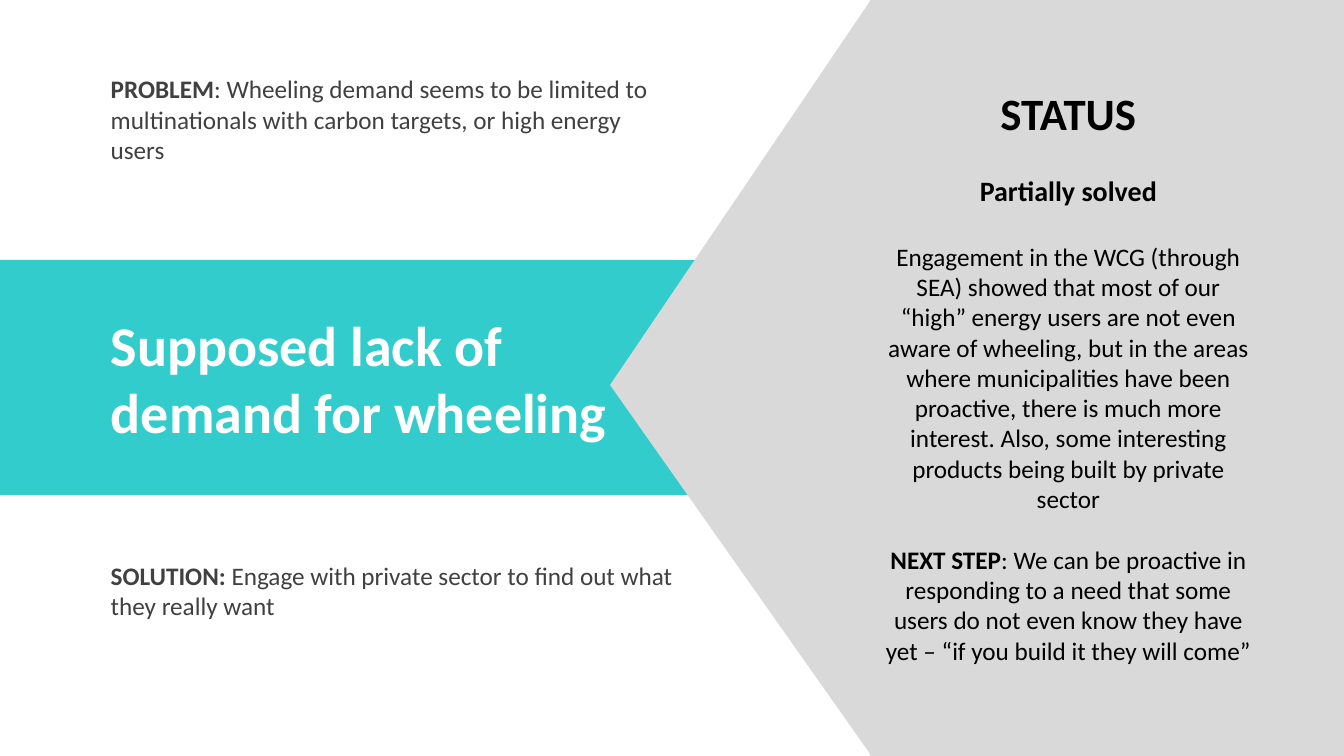
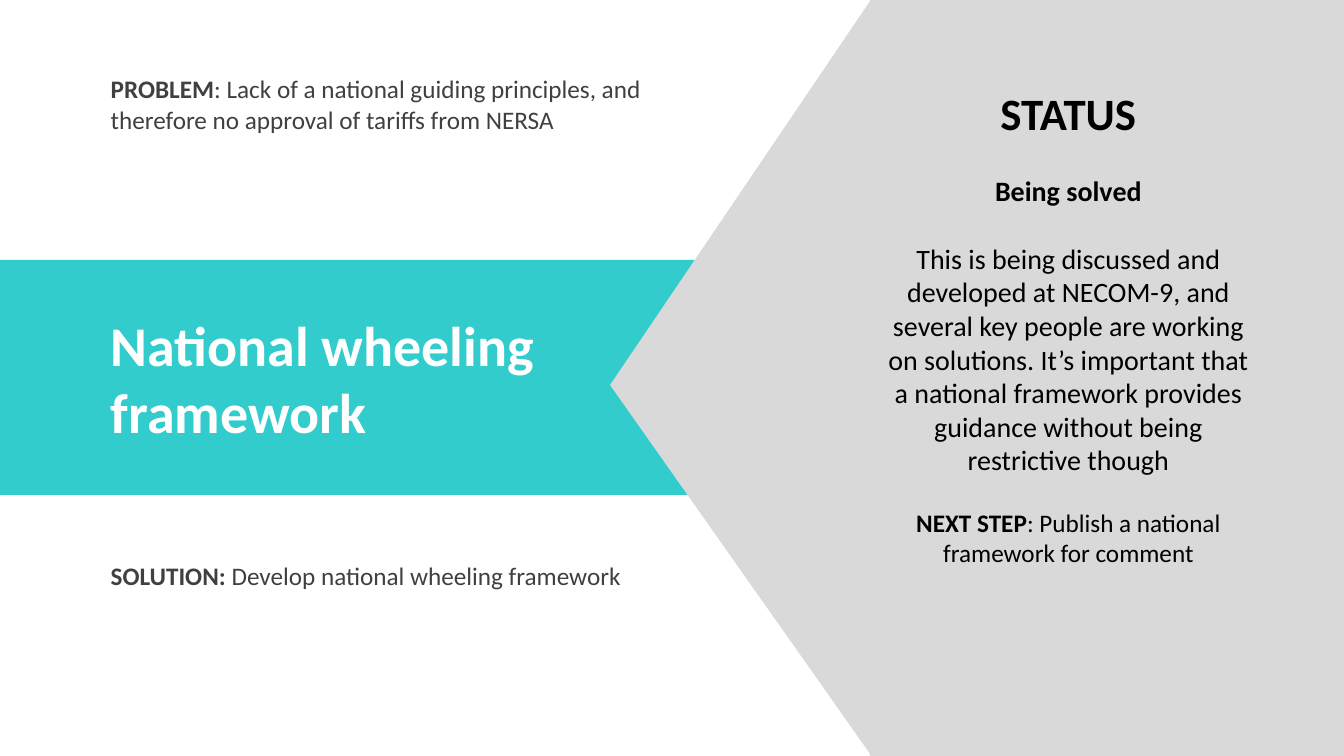
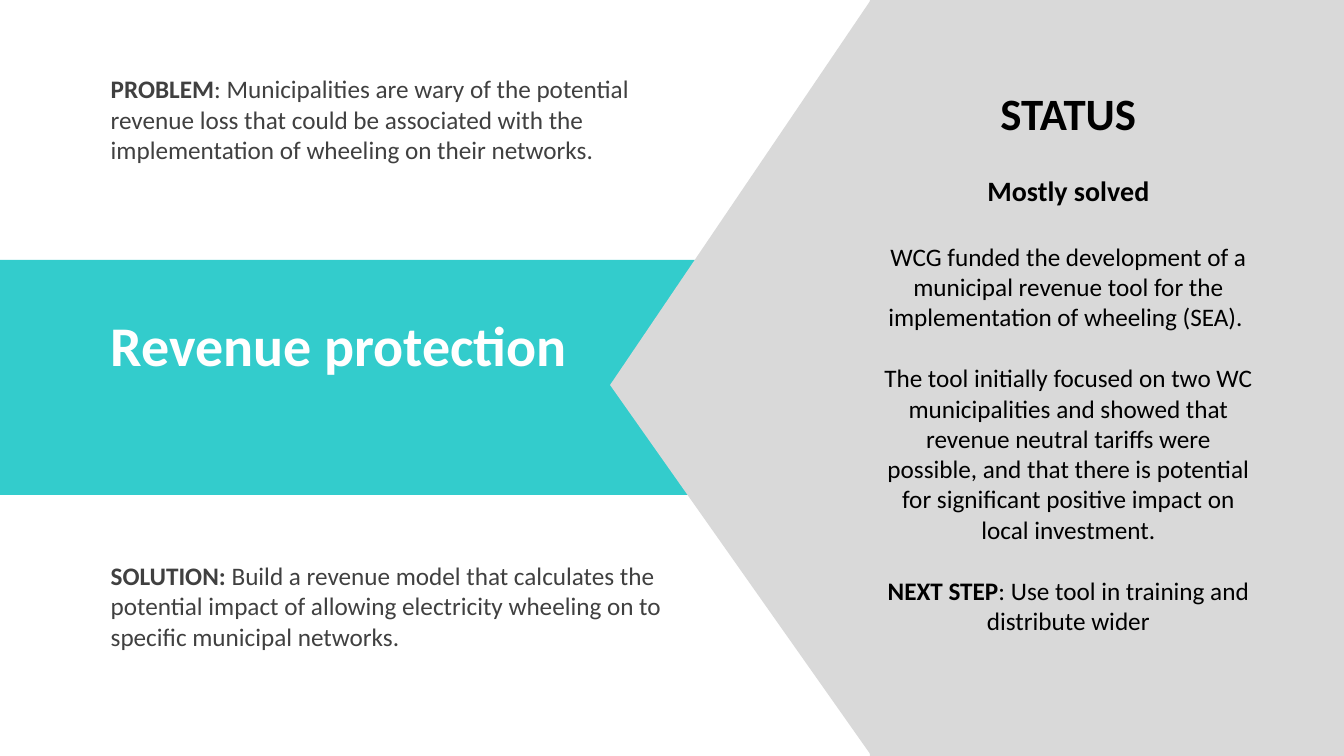
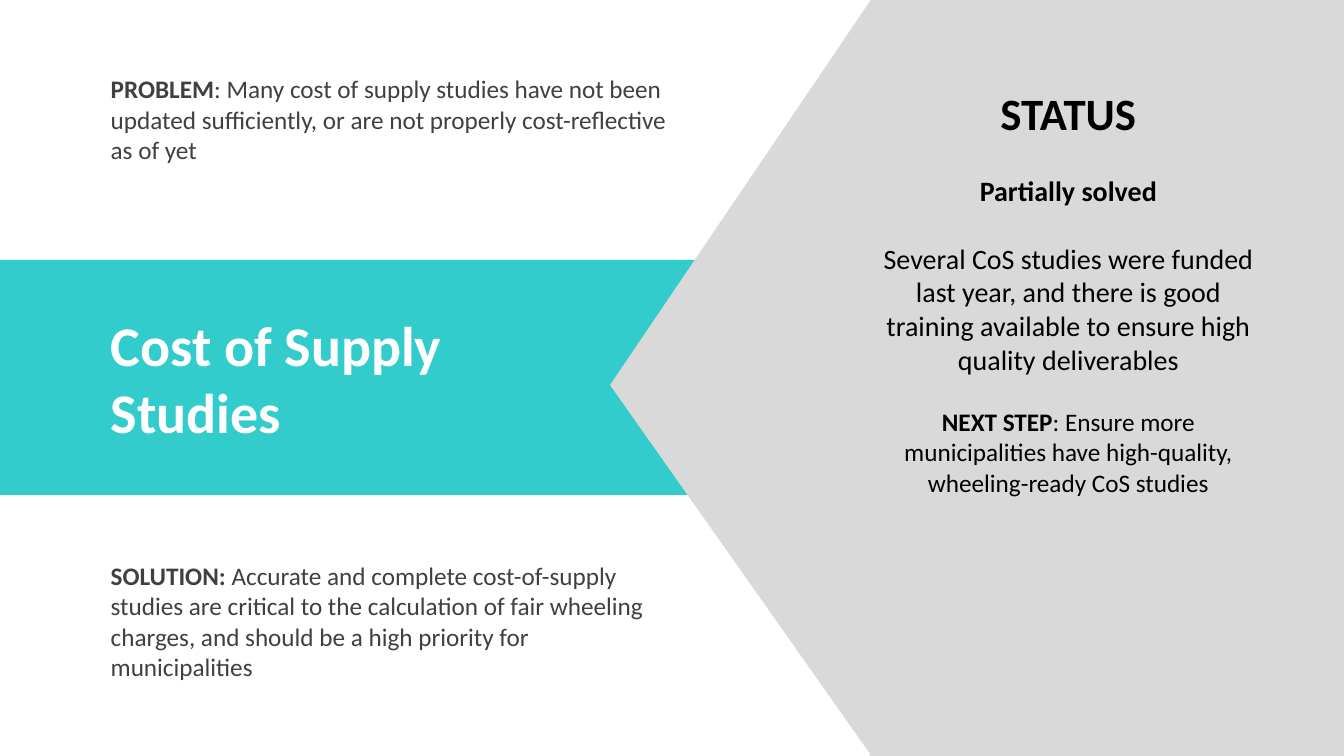
"""Build four slides on wheeling barriers: problem, solution and status of each."""
from pptx import Presentation
from pptx import util as u
from pptx.dml.color import RGBColor
from pptx.enum import shapes, text

COLORS = {"band": "33CCCC", "panel": "D9D9D9", "title": "FFFFFF", "note": "404040", "status": "000000"}
FONT = "Calibri"
LEFT, NOTE_WIDTH = u.Cm(2.54), u.Cm(14.66)
BLANK_LINE = {18: u.Pt(22), 20: u.Pt(24.4)}

barriers = [
    {
        "title": ["Supposed lack of", "demand for wheeling"],
        "problem": ": Wheeling demand seems to be limited to multinationals with carbon targets, or high energy users",
        "solution": "Engage with private sector to find out what they really want",
        "progress": "Partially solved",
        "details": ["Engagement in the WCG (through SEA) showed that most of our “high” energy users are not even "
                    "aware of wheeling, but in the areas where municipalities have been proactive, there is much "
                    "more interest. Also, some interesting products being built by private sector"],
        "detail_size": 18,
        "next_step": ": We can be proactive in responding to a need that some users do not even know they have yet "
                     "– “if you build it they will come”",
        "heights": {"problem": 2.57, "solution": 1.8, "status": 17.27},
    },
    {
        "title": ["National wheeling", "framework"],
        "problem": ": Lack of a national guiding principles, and therefore no approval of tariffs from NERSA",
        "solution": "Develop national wheeling framework",
        "progress": "Being solved",
        "details": ["This is being discussed and developed at NECOM-9, and several key people are working on "
                    "solutions. It’s important that a national framework provides guidance without being "
                    "restrictive though"],
        "detail_size": 20,
        "next_step": ": Publish a national framework for comment",
        "heights": {"problem": 1.8, "solution": 1.02, "status": 14.78},
    },
    {
        "title": ["Revenue protection"],
        "problem": ": Municipalities are wary of the potential revenue loss that could be associated with the "
                   "implementation of wheeling on their networks.",
        "solution": "Build a revenue model that calculates the potential impact of allowing electricity wheeling "
                    "on to specific municipal networks.",
        "progress": "Mostly solved",
        "details": ["WCG funded the development of a municipal revenue tool for the implementation of wheeling "
                    "(SEA). ",
                    "The tool initially focused on two WC municipalities and showed that revenue neutral tariffs "
                    "were possible, and that there is potential for significant positive impact on local "
                    "investment."],
        "detail_size": 18,
        "next_step": ": Use tool in training and distribute wider",
        "heights": {"problem": 2.57, "solution": 2.57, "status": 16.51},
    },
    {
        "title": ["Cost of Supply", "Studies"],
        "problem": ": Many cost of supply studies have not been updated sufficiently, or are not properly "
                   "cost-reflective as of yet",
        "solution": "Accurate and complete cost-of-supply studies are critical to the calculation of fair "
                    "wheeling charges, and should be a high priority for municipalities",
        "progress": "Partially solved",
        "details": ["Several CoS studies were funded last year, and there is good training available to ensure "
                    "high quality deliverables"],
        "detail_size": 20,
        "next_step": ": Ensure more municipalities have high-quality, wheeling-ready CoS studies",
        "heights": {"problem": 2.57, "solution": 3.33, "status": 13},
    },
]


def write(frame, paragraphs, color, align):
    """Fill a frame with (space before, size, [(text, bold), ...]) paragraphs."""
    frame.word_wrap = True
    frame.vertical_anchor = text.MSO_ANCHOR.TOP
    for index, (space, size, runs) in enumerate(paragraphs):
        paragraph = frame.add_paragraph() if index else frame.paragraphs[0]
        paragraph.alignment = align
        if space:
            paragraph.space_before = space
        for words, bold in runs:
            run = paragraph.add_run()
            run.text = words
            run.font.name, run.font.size, run.font.bold = FONT, u.Pt(size), bold
            run.font.color.rgb = RGBColor.from_string(COLORS[color])


def add_block(parent, preset, box, color):
    """Add a plain filled shape; box holds centimetres."""
    block = parent.add_shape(preset, *[u.Cm(n) for n in box])
    block.shadow.inherit = False
    block.fill.solid()
    block.fill.fore_color.rgb = RGBColor.from_string(COLORS[color])
    block.line.fill.background()
    return block


deck = Presentation()
deck.slide_width, deck.slide_height = u.Cm(33.87), u.Cm(19.05)
layout = deck.slide_layouts.get_by_name("Title Only")

for number, barrier in enumerate(barriers):
    slide = deck.slides.add_slide(layout)
    if number == 0:
        band = add_block(slide.shapes, shapes.MSO_SHAPE.RECTANGLE, (0, 6.55, 33.87, 5.92), "band")
        band.element.nvSpPr.cNvPr.set("id", "20")
        layout.shapes.element.insert(2, band.element)

    title = slide.shapes.title
    title.left, title.top, title.width, title.height = LEFT, u.Cm(7.7), u.Cm(14), u.Cm(3.68)
    write(title.text_frame, [(None, 40, [(line, True)]) for line in barrier["title"]],
          "title", text.PP_ALIGN.LEFT)
    title.text_frame.auto_size = text.MSO_AUTO_SIZE.NONE

    heights = barrier["heights"]
    for part, label, top in (("solution", "SOLUTION: ", 14), ("problem", "PROBLEM", 1.73)):
        note = slide.shapes.add_textbox(LEFT, u.Cm(top), NOTE_WIDTH, u.Cm(heights[part]))
        write(note.text_frame, [(None, 18, [(label, True), (barrier[part], False)])],
              "note", text.PP_ALIGN.LEFT)
        note.text_frame.auto_size = text.MSO_AUTO_SIZE.SHAPE_TO_FIT_TEXT

    panel = slide.shapes.add_group_shape().shapes
    add_block(panel, shapes.MSO_SHAPE.RECTANGLE, (21.92, 0, 11.95, 19.05), "panel")
    pointer = add_block(panel, shapes.MSO_SHAPE.ISOSCELES_TRIANGLE, (9.14, 6.22, 19.05, 6.58), "panel")
    pointer.adjustments[0] = 0.49
    pointer.rotation = 270

    status_lines = [(None, 32, [("STATUS", True)]),
                    (BLANK_LINE[20], 20, [(barrier["progress"], True)])]
    for index, detail in enumerate(barrier["details"]):
        status_lines.append((BLANK_LINE[18 if index else 20], barrier["detail_size"], [(detail, False)]))
    status_lines.append((BLANK_LINE[18], 18, [("NEXT STEP", True), (barrier["next_step"], False)]))
    status = slide.shapes.add_textbox(u.Cm(21.97), u.Cm(2.03), u.Cm(9.91), u.Cm(heights["status"]))
    write(status.text_frame, status_lines, "status", text.PP_ALIGN.CENTER)
    status.text_frame.auto_size = text.MSO_AUTO_SIZE.SHAPE_TO_FIT_TEXT

deck.save("out.pptx")
